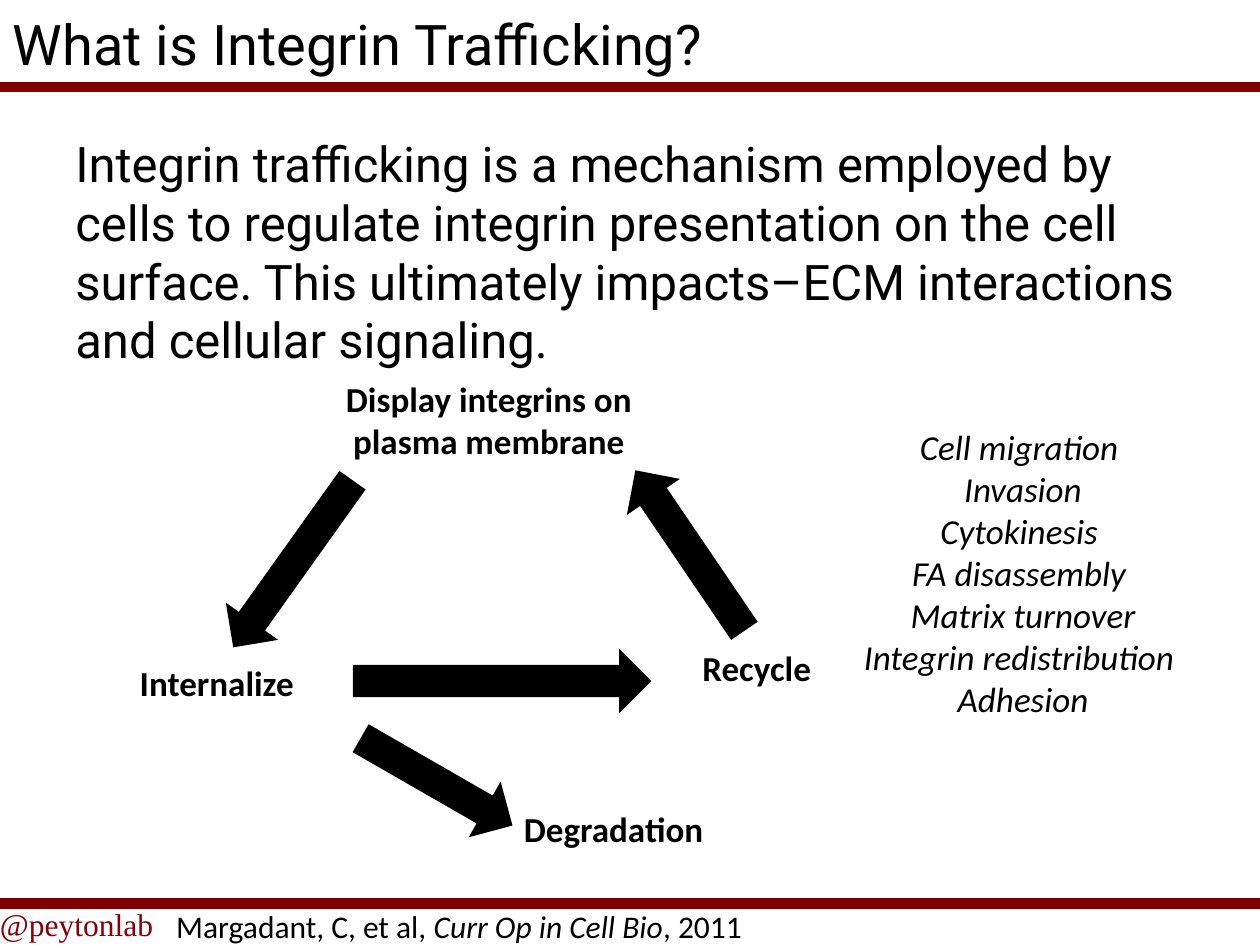
from lxml.etree import SubElement
from pptx import Presentation
from pptx.dml.color import RGBColor
from pptx.enum.shapes import MSO_CONNECTOR, MSO_SHAPE
from pptx.enum.text import MSO_ANCHOR, MSO_AUTO_SIZE, PP_ALIGN
from pptx.oxml.ns import qn
from pptx.util import Inches, Pt

WIDE, HIGH = 10, 7.5
HUES = {"ink": "000000", "rule": "800000", "tag": "84000B"}
LOOKS = {
    "title": {"name": "Roboto", "size": Pt(32)},
    "body": {"name": "Roboto", "size": Pt(28)},
    "step": {"name": "Calibri", "size": Pt(20), "bold": True},
    "role": {"name": "Calibri", "size": Pt(20), "italic": True},
    "cite": {"name": "Calibri", "size": Pt(18)},
    "tag": {"name": "Times New Roman", "size": Pt(18)},
}
TITLE = "What is Integrin Trafficking?"
BODY = ("Integrin trafficking is a mechanism employed by cells to regulate "
        "integrin presentation on the cell surface. This ultimately "
        "impacts–ECM interactions and cellular signaling.")
CITE = [("Margadant, C, et al, ", False), ("Curr Op in Cell Bio", True), (", 2011", False)]
ROLES = ["Cell migration ", "Invasion", "Cytokinesis ", "FA disassembly ",
         "Matrix turnover", "Integrin redistribution ", "Adhesion"]
STEPS = [
    ("Display integrins on plasma membrane", (2.48, 2.95, 2.8, 0.77)),
    ("Recycle", (5.15, 5.08, 1.71, 0.44)),
    ("Internalize", (0.63, 5.2, 2.18, 0.44)),
    ("Degradation", (3.47, 6.36, 2.8, 0.44)),
]
THICK = 0.51
ARROWS = [
    (2.07, 3.66, 1.63, 35.5),
    (3.73, 4.22, 2.37, 270),
    (5.22, 3.6, 1.54, 145.8),
    (3.21, 5.51, 1.39, 299.9),
]
RULES = [0.69, 7.17]


def tint(key):
    return RGBColor.from_string(HUES[key])


def style(font, look, hue="ink", **more):
    for key, val in {**LOOKS[look], **more}.items():
        setattr(font, key, val)
    font.color.rgb = tint(hue)


def write(slide, spot, paras, look, hue="ink", align=PP_ALIGN.LEFT, wrap=True):
    box = slide.shapes.add_textbox(*map(Inches, spot))
    frame = box.text_frame
    frame.word_wrap = wrap
    for i, runs in enumerate(paras):
        para = frame.paragraphs[0] if i == 0 else frame.add_paragraph()
        para.alignment = align
        for text, more in runs:
            run = para.add_run()
            run.text = text
            style(run.font, look, hue, **more)
    return frame


def rule(slide, y):
    line = slide.shapes.add_connector(
        MSO_CONNECTOR.STRAIGHT, 0, Inches(y), Inches(WIDE), Inches(y))
    line.line.width = Pt(6)
    line.line.color.rgb = tint("rule")
    SubElement(line._element.spPr, qn("a:effectLst"))


def arrow(slide, x, y, size, turn):
    mark = slide.shapes.add_shape(
        MSO_SHAPE.DOWN_ARROW, *map(Inches, (x, y, THICK, size)))
    mark.rotation = turn
    mark.shadow.inherit = False
    mark.fill.solid()
    mark.fill.fore_color.rgb = tint("ink")
    mark.line.fill.background()


def head(slide):
    title = slide.shapes.title
    spot = dict(left=0, top=0, width=Inches(WIDE), height=Inches(RULES[0]))
    for key, val in spot.items():
        setattr(title, key, val)
    frame = title.text_frame
    frame.text = TITLE
    frame.auto_size = MSO_AUTO_SIZE.NONE
    frame.vertical_anchor = MSO_ANCHOR.MIDDLE
    frame.paragraphs[0].alignment = PP_ALIGN.LEFT
    style(frame.paragraphs[0].runs[0].font, "title")


def main():
    deck = Presentation()
    deck.slide_width, deck.slide_height = Inches(WIDE), Inches(HIGH)
    slide = deck.slides.add_slide(deck.slide_layouts[5])
    for y in RULES:
        rule(slide, y)
    tag = write(slide, (0, 7.13, 1.36, 0.4), [[("@peytonlab", {})]],
                "tag", "tag", wrap=False)
    tag.margin_left = 0
    head(slide)
    write(slide, (0.5, 1.01, 9, 5.69), [[(BODY, {})]], "body")
    write(slide, (1.3, 7.15, 4.81, 0.4),
          [[(text, {"italic": slant}) for text, slant in CITE]], "cite", wrap=False)
    for text, spot in STEPS:
        write(slide, spot, [[(text, {})]], "step", align=PP_ALIGN.CENTER)
    for part in ARROWS:
        arrow(slide, *part)
    write(slide, (6.74, 3.33, 2.76, 2.46), [[(text, {})] for text in ROLES],
          "role", align=PP_ALIGN.CENTER, wrap=False)
    deck.save("out.pptx")


if __name__ == "__main__":
    main()
